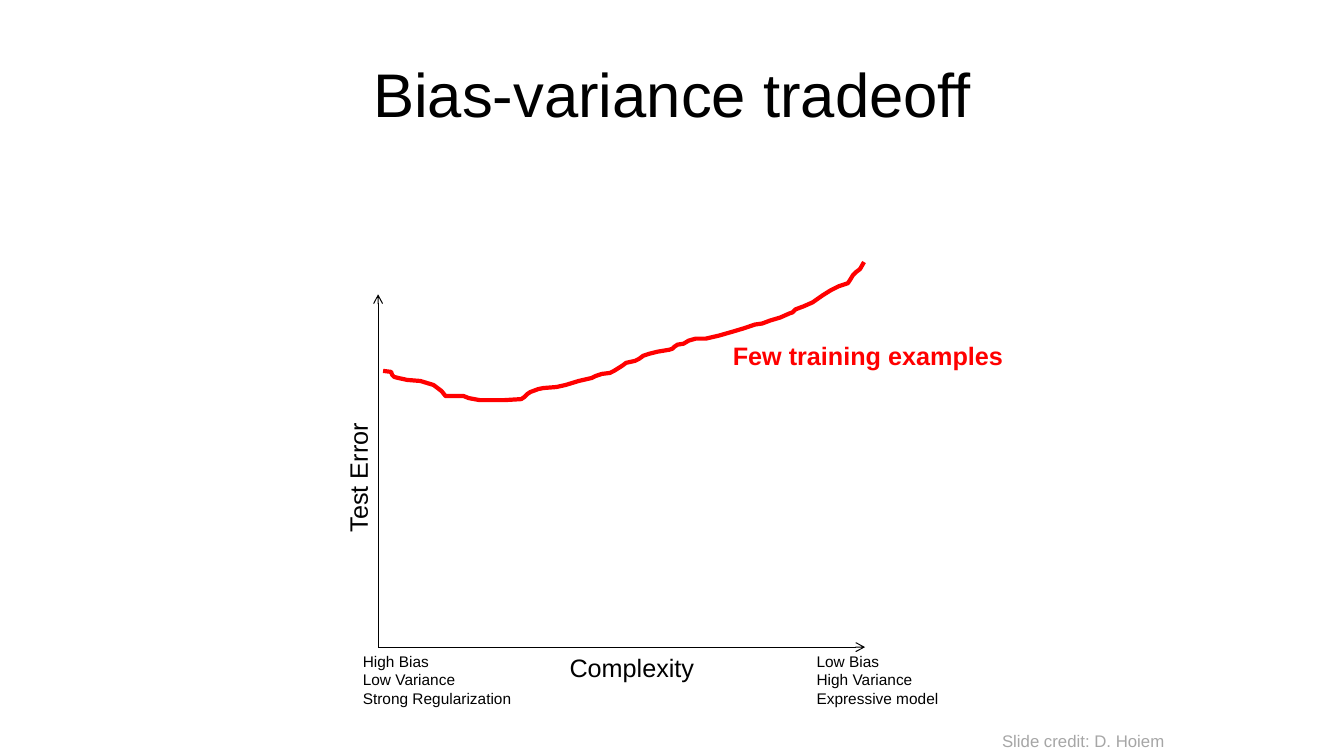
import pptx
import pptx.util
import pptx.dml.color
import pptx.enum.shapes
import pptx.enum.text
import pptx.oxml.ns
from lxml import etree
from pptx.util import Inches

theme = {
    "font": "Arial",
    "black": "000000", "red": "FF0000", "gray": "A6A6A6",
    "title": 44, "label": 18, "note": 11, "credit": 12,
    "axis": 0.75, "curve": 3,
}


def paint(line, color, width):
    line.color.rgb = pptx.dml.color.RGBColor.from_string(theme[color])
    line.width = pptx.util.Pt(theme[width])


def write(box, lines, size, color="black", bold=False, turn=0, wrap=False):
    shape = slide.shapes.add_textbox(*[Inches(n) for n in box])
    shape.rotation = turn
    frame = shape.text_frame
    frame.word_wrap = wrap
    for i, text in enumerate(lines):
        para = frame.paragraphs[0] if i == 0 else frame.add_paragraph()
        run = para.add_run()
        run.text = text
        run.font.name = theme["font"]
        run.font.size = pptx.util.Pt(theme[size])
        run.font.bold = bold
        run.font.color.rgb = pptx.dml.color.RGBColor.from_string(theme[color])
    return frame


deck = pptx.Presentation()
deck.slide_width = Inches(13.33)
deck.slide_height = Inches(7.5)
slide = deck.slides.add_slide(deck.slide_layouts[6])

title = write((0.67, 0.3, 12, 1.25), ["Bias-variance tradeoff"], "title", wrap=True)
title.vertical_anchor = pptx.enum.text.MSO_ANCHOR.MIDDLE
title.paragraphs[0].alignment = pptx.enum.text.PP_ALIGN.CENTER

points = [
    (3.8, 3.68), (3.88, 3.69), (3.89, 3.72), (3.91, 3.74), (3.95, 3.75),
    (4.04, 3.77), (4.17, 3.78), (4.3, 3.82), (4.38, 3.88), (4.42, 3.93),
    (4.6, 3.93), (4.65, 3.95), (4.76, 3.97), (5.0, 3.97), (5.17, 3.96),
    (5.2, 3.94), (5.23, 3.91), (5.26, 3.89), (5.34, 3.86), (5.39, 3.85),
    (5.52, 3.84), (5.61, 3.82), (5.74, 3.78), (5.87, 3.75), (5.91, 3.73),
    (5.97, 3.71), (6.05, 3.7), (6.09, 3.68), (6.17, 3.63), (6.21, 3.6),
    (6.3, 3.58), (6.34, 3.56), (6.38, 3.53), (6.44, 3.51), (6.52, 3.49),
    (6.64, 3.47), (6.67, 3.46), (6.69, 3.44), (6.72, 3.42), (6.78, 3.41),
    (6.83, 3.38), (6.9, 3.36), (7.0, 3.36), (7.13, 3.33), (7.27, 3.29),
    (7.37, 3.26), (7.49, 3.22), (7.56, 3.21), (7.64, 3.18), (7.74, 3.15),
    (7.83, 3.11), (7.86, 3.1), (7.89, 3.07), (7.97, 3.04), (8.06, 3.0),
    (8.16, 2.93), (8.24, 2.88), (8.28, 2.86), (8.32, 2.84), (8.41, 2.81),
    (8.43, 2.78), (8.46, 2.73), (8.49, 2.7), (8.53, 2.67), (8.57, 2.6),
]
trace = [(Inches(x), Inches(y)) for x, y in points]
build = slide.shapes.build_freeform(*trace[0])
build.add_line_segments(trace[1:], close=False)
curve = build.convert_to_shape()
curve.shadow.inherit = False
curve.fill.background()
paint(curve.line, "red", "curve")

write((7.17, 3.33, 2.91, 0.4), ["Few training examples"], "label", "red", bold=True)

left, base = 3.75, 6.42
for end in [(left, 2.92), (8.58, base)]:
    axis = slide.shapes.add_connector(
        pptx.enum.shapes.MSO_CONNECTOR.STRAIGHT,
        *[Inches(n) for n in (left, base, *end)])
    paint(axis.line, "black", "axis")
    props = axis.element.spPr
    stroke = props.find(pptx.oxml.ns.qn("a:ln"))
    etree.SubElement(stroke, pptx.oxml.ns.qn("a:tailEnd"), type="arrow")
    etree.SubElement(props, pptx.oxml.ns.qn("a:effectLst"))

write((5.55, base, 1.45, 0.4), ["Complexity"], "label")
write((2.9, 4.53, 1.3, 0.4), ["Test Error"], "label", turn=270)
write((8, base, 1.42, 0.66), ["Low Bias", "High Variance", "Expressive model"], "note")
write((3.5, base, 1.69, 0.66), ["High Bias", "Low Variance", "Strong Regularization"], "note")
write((9.84, 7.2, 1.82, 0.3), ["Slide credit: D. Hoiem"], "credit", "gray")

deck.save("out.pptx")
